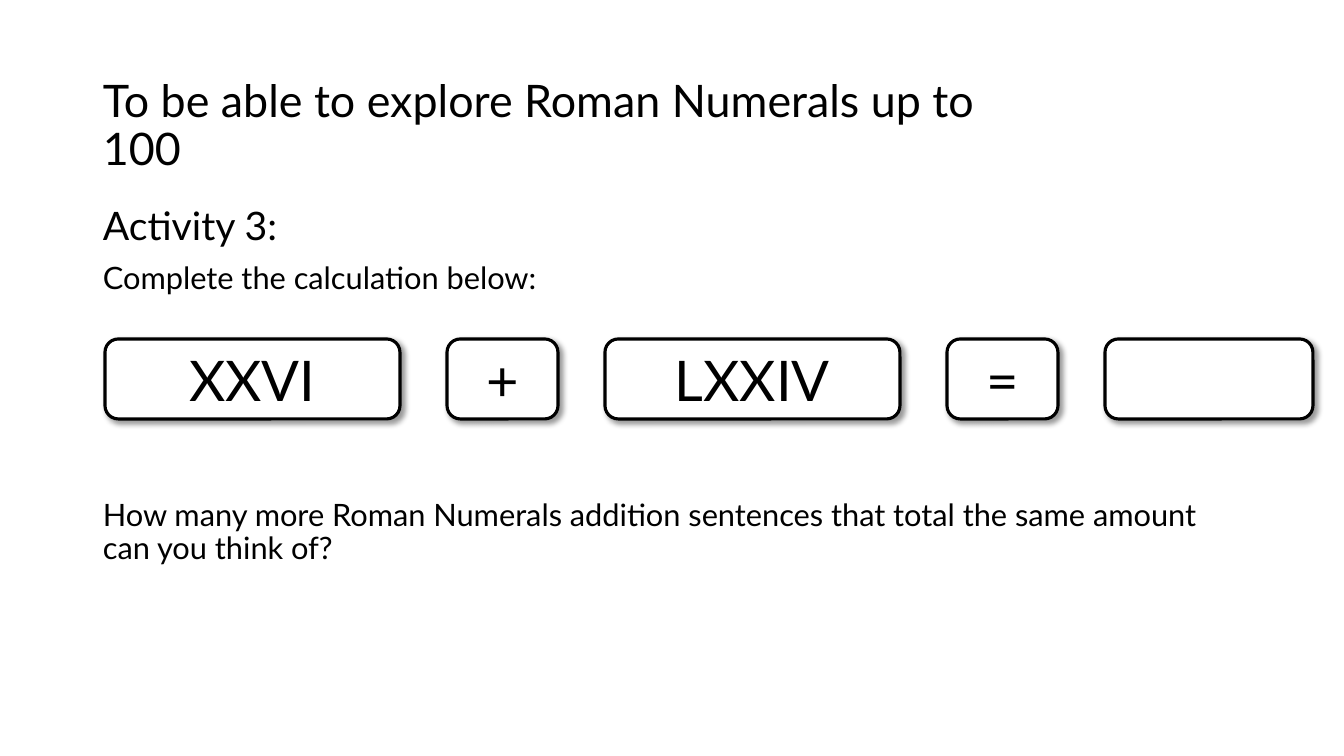
from lxml import etree
from pptx import Presentation
from pptx import util as u
from pptx.dml.color import RGBColor
from pptx.enum import shapes, text
from pptx.oxml import ns, parse_xml

BLACK = RGBColor(0, 0, 0)
WHITE = RGBColor(255, 255, 255)
FONT = "Lato"
SLIDE_WIDTH, SLIDE_HEIGHT = 1344, 756
EMU_PER_PX = u.Inches(7.5) / SLIDE_HEIGHT

SHADOW = (
    f'<a:outerShdw {ns.nsdecls("a")} blurRad="{u.Pt(4)}" dist="{u.Pt(3)}" '
    'dir="2700000" algn="tl" rotWithShape="0">'
    '<a:srgbClr val="000000"><a:alpha val="40000"/></a:srgbClr></a:outerShdw>'
)


def px(*lengths):
    return [u.Emu(round(length * EMU_PER_PX)) for length in lengths]


def write(frame, lines, line_spacing=1.0):
    """Fill a text frame with (text, size, space before) lines."""
    frame.word_wrap = True
    frame.text = "\n".join(line[0] for line in lines)
    for paragraph, (_, size, space_before) in zip(frame.paragraphs, lines):
        paragraph.line_spacing = line_spacing
        paragraph.space_before = u.Pt(space_before)
        for run in paragraph.runs:
            run.font.name = FONT
            run.font.size = u.Pt(size)
            run.font.color.rgb = BLACK


presentation = Presentation()
presentation.slide_width, presentation.slide_height = px(SLIDE_WIDTH, SLIDE_HEIGHT)
slide = presentation.slides.add_slide(presentation.slide_layouts[6])

# Activity text, with room for the calculation before the question
activity = slide.shapes.add_textbox(*px(93, 202, 1159, 480))
write(activity.text_frame, [
    ("Activity 3:", 28, 0),
    ("Complete the calculation below:", 22, 10),
    ("How many more Roman Numerals addition sentences that total "
     "the same amount can you think of?", 22, 145),
], line_spacing=0.9)

title = slide.shapes.add_textbox(*px(93, 54, 968, 146))
title.text_frame.vertical_anchor = text.MSO_ANCHOR.MIDDLE
write(title.text_frame,
      [("To be able to explore Roman Numerals up to 100", 32, 0)],
      line_spacing=0.9)

# Calculation row
CARD_TOP, CARD_HEIGHT, CARD_GAP = 339, 80, 47
cards = [("XXVI", 295), ("+", 111), ("LXXIV", 295), ("=", 111), ("", 208)]
left = 105
for label, width in cards:
    card = slide.shapes.add_shape(
        shapes.MSO_SHAPE.ROUNDED_RECTANGLE,
        *px(left, CARD_TOP, width, CARD_HEIGHT))
    card.fill.solid()
    card.fill.fore_color.rgb = WHITE
    card.line.color.rgb = BLACK
    card.line.width = u.Pt(2.25)
    card.shadow.inherit = False
    effects = card._element.spPr.find(ns.qn("a:effectLst"))
    effects.append(parse_xml(SHADOW))
    if label:
        card.text_frame.vertical_anchor = text.MSO_ANCHOR.MIDDLE
        write(card.text_frame, [(label, 40, 0)])
        card.text_frame.paragraphs[0].alignment = text.PP_ALIGN.CENTER
    left += width + CARD_GAP

presentation.save("out.pptx")
